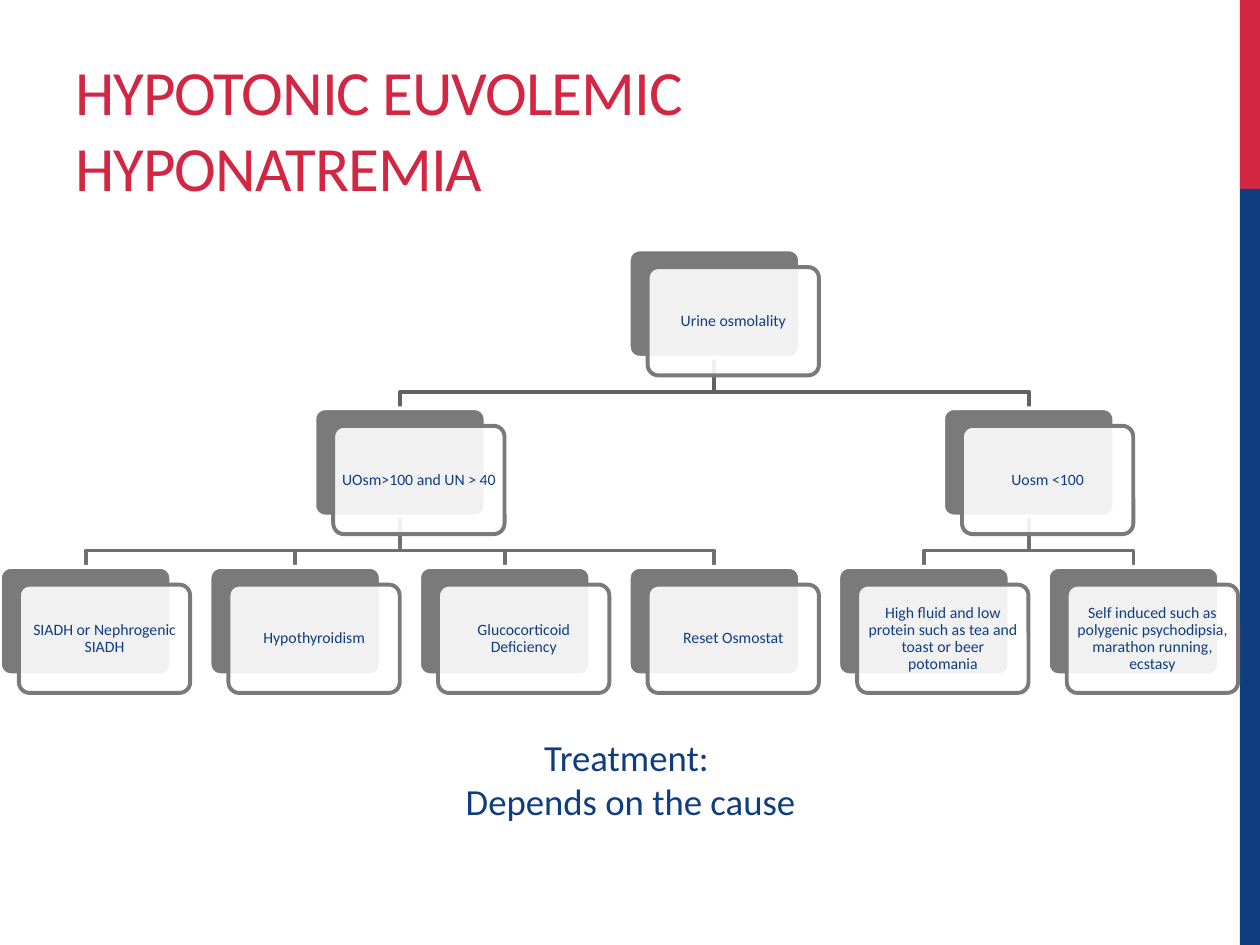
from pptx import Presentation
from pptx import util as u
from pptx.dml.color import RGBColor
from pptx.enum import shapes, text
from pptx.oxml.ns import qn
from lxml import etree

RED = RGBColor(0xD2, 0x26, 0x43)
NAVY = RGBColor(0x10, 0x3D, 0x80)
GRAY = RGBColor(0x7A, 0x7A, 0x7A)
DARK = RGBColor(0x62, 0x62, 0x62)
MID = RGBColor(0x6F, 0x6F, 0x6F)
WHITE = RGBColor(0xFF, 0xFF, 0xFF)

STEP = 1.66 + 0.01 / 3
WIDE, HIGH = 1.36, 0.86
ROWS = [1.98, 3.24, 4.5]
SHIFT_X, SHIFT_Y = 0.15, 0.14

TREE = ("Urine osmolality", 3, [
    ("UOsm>100 and UN > 40", 1.5, [
        ("SIADH or Nephrogenic SIADH", 0, []),
        ("Hypothyroidism", 1, []),
        ("Glucocorticoid Deficiency", 2, []),
        ("Reset Osmostat", 3, []),
    ]),
    ("Uosm <100", 4.5, [
        ("High fluid and low protein such as tea and toast or beer potomania", 4, []),
        ("Self induced such as polygenic psychodipsia, marathon running, ecstasy", 5, []),
    ]),
])


class Deck:
    font = "Calibri"
    weight = u.Pt(2.25)

    def __init__(self):
        self.prs = Presentation()
        self.prs.slide_width = u.Inches(10)
        self.prs.slide_height = u.Inches(7.5)
        self.slide = self.prs.slides.add_slide(self.prs.slide_layouts[5])

    def place(self, item, left, top, width, height):
        item.left, item.top = u.Inches(left), u.Inches(top)
        item.width, item.height = u.Inches(width), u.Inches(height)

    def add_run(self, para, words, size, color, align):
        para.alignment = align
        run = para.add_run()
        run.text = words
        run.font.name = self.font
        run.font.size = u.Pt(size)
        run.font.color.rgb = color
        return run

    def title(self, words, *box):
        item = self.slide.shapes.title
        self.place(item, *box)
        frame = item.text_frame
        frame.auto_size = text.MSO_AUTO_SIZE.NONE
        frame.vertical_anchor = text.MSO_ANCHOR.BOTTOM
        run = self.add_run(frame.paragraphs[0], words, 36, RED, text.PP_ALIGN.LEFT)
        run._r.get_or_add_rPr().set("spc", "-60")

    def shape(self, kind, fill, line, *box):
        item = self.slide.shapes.add_shape(kind, *map(u.Inches, box))
        item.shadow.inherit = False
        item.fill.solid()
        item.fill.fore_color.rgb = fill
        if line is None:
            item.line.fill.background()
        else:
            item.line.color.rgb = line
            item.line.width = self.weight
        return item

    def bar(self, color, *box):
        self.shape(shapes.MSO_SHAPE.RECTANGLE, color, None, *box)

    def panel(self, fill, line, *box):
        item = self.shape(shapes.MSO_SHAPE.ROUNDED_RECTANGLE, fill, line, *box)
        item.adjustments[0] = 0.1
        return item

    def card(self, words, left, top):
        self.panel(GRAY, WHITE, left, top, WIDE, HIGH)
        front = self.panel(WHITE, GRAY, left + SHIFT_X, top + SHIFT_Y, WIDE, HIGH)
        tint = front._element.spPr.find(qn("a:solidFill"))[0]
        etree.SubElement(tint, qn("a:alpha")).set("val", "90000")
        frame = front.text_frame
        frame.word_wrap = True
        frame.vertical_anchor = text.MSO_ANCHOR.MIDDLE
        frame.margin_left = frame.margin_right = u.Inches(0.04)
        frame.margin_top = frame.margin_bottom = u.Inches(0.04)
        para = frame.paragraphs[0]
        para.line_spacing = 0.9
        self.add_run(para, words, 9, NAVY, text.PP_ALIGN.CENTER)

    def branch(self, color, x, top, end, low):
        bend = low - 0.13
        points = [(x, top), (x, bend), (end, bend), (end, low)]
        start, *rest = [(u.Inches(a), u.Inches(b)) for a, b in points]
        line = self.slide.shapes.build_freeform(*start)
        line.add_line_segments(rest, close=False)
        item = line.convert_to_shape()
        item.shadow.inherit = False
        item.fill.background()
        item.line.color.rgb = color
        item.line.width = self.weight

    def links(self, node, level=0):
        _, col, kids = node
        for kid in reversed(kids):
            self.links(kid, level + 1)
            self.branch((DARK, MID)[level], col * STEP + WIDE / 2, ROWS[level] + HIGH,
                        kid[1] * STEP + WIDE / 2, ROWS[level + 1])

    def cards(self, node, level=0):
        words, col, kids = node
        self.card(words, col * STEP, ROWS[level])
        for kid in kids:
            self.cards(kid, level + 1)

    def note(self, lines, *box):
        frame = self.slide.shapes.add_textbox(*map(u.Inches, box)).text_frame
        frame.word_wrap = True
        frame.auto_size = text.MSO_AUTO_SIZE.SHAPE_TO_FIT_TEXT
        for i, words in enumerate(lines):
            para = frame.add_paragraph() if i else frame.paragraphs[0]
            self.add_run(para, words, 21, NAVY, text.PP_ALIGN.CENTER)


def main():
    deck = Deck()
    deck.bar(RED, 9.84, 0, 0.16, 1.5)
    deck.bar(NAVY, 9.84, 1.5, 0.16, 6)
    deck.title("HYPOTONIC EUVOLEMIC HYPONATREMIA", 0.5, 0.17, 6.33, 1.5)
    deck.links(TREE)
    deck.cards(TREE)
    deck.note(["Treatment: ", "Depends on the cause"], 2.22, 5.78, 5.57, 0.81)
    deck.prs.save("out.pptx")


if __name__ == "__main__":
    main()
